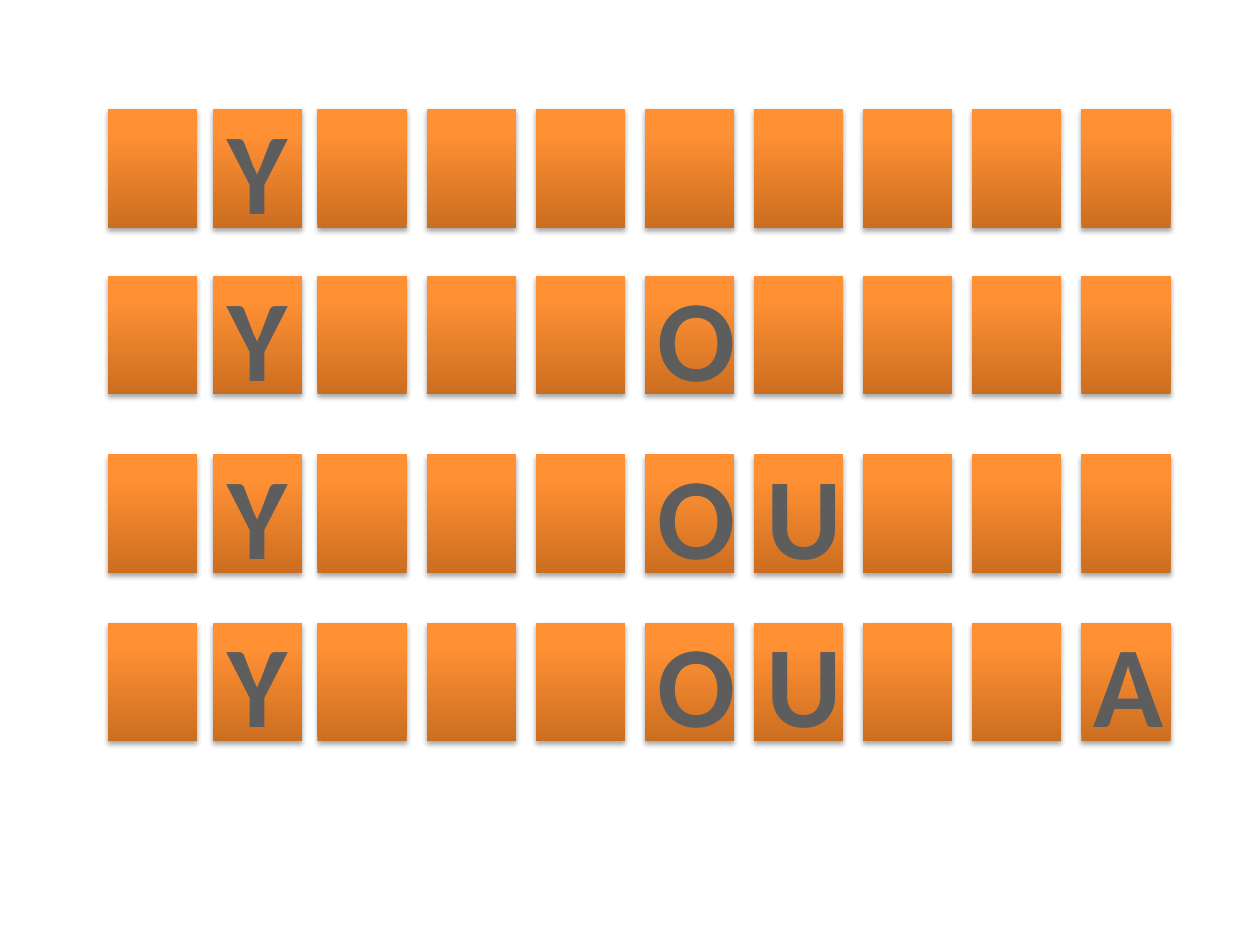
from dataclasses import dataclass

import pptx
import pptx.enum.shapes
import pptx.enum.text
import pptx.oxml
import pptx.oxml.ns
import pptx.util
from pptx.util import Cm


@dataclass(frozen=True)
class Theme:
    font: str = "Calibri"
    letter_pt: int = 66
    outline: str = "FFFFFF"
    outline_pt: float = 1.4
    tile_stops: tuple = ((0, "CC6E20"), (80, "FF9034"), (100, "FF9136"))
    letter_stops: tuple = ((0, "555555"), (49, "5D5D5D"), (50, "000000"),
                           (95, "000000"), (100, "000000"))
    shadow: str = "000000"
    shadow_alpha: int = 35
    shadow_blur_pt: float = 3.1
    shadow_distance_pt: float = 1.8


THEME = Theme()
TILE_W, TILE_H = Cm(1.8), Cm(2.39)
# The first two columns sit slightly closer together than the rest.
COLUMNS = [2.18, 4.29] + [6.4 + 2.2 * i for i in range(8)]
# Each row's top, with the letters revealed by column index.
ROWS = [
    (2.2, {1: "Y"}),
    (5.56, {1: "Y", 5: "O"}),
    (9.16, {1: "Y", 5: "O", 6: "U"}),
    (12.55, {1: "Y", 5: "O", 6: "U", 9: "A"}),
]


def drawing_xml(tag, attributes, content):
    ns = pptx.oxml.ns.nsdecls("a")
    return pptx.oxml.parse_xml(f"<a:{tag} {ns} {attributes}>{content}</a:{tag}>")


def gradient(stops, degrees):
    gs = "".join(f'<a:gs pos="{pos * 1000}"><a:srgbClr val="{color}"/></a:gs>'
                 for pos, color in stops)
    return drawing_xml("gradFill", 'rotWithShape="1"',
                       f'<a:gsLst>{gs}</a:gsLst><a:lin ang="{degrees * 60000}" scaled="0"/>')


def add_shadow(sp):
    sp.shadow.inherit = False
    effects = sp._element.spPr.find(pptx.oxml.ns.qn("a:effectLst"))
    blur = pptx.util.Pt(THEME.shadow_blur_pt)
    distance = pptx.util.Pt(THEME.shadow_distance_pt)
    effects.append(drawing_xml(
        "outerShdw", f'blurRad="{blur}" dist="{distance}" dir="5400000" rotWithShape="0"',
        f'<a:srgbClr val="{THEME.shadow}">'
        f'<a:alpha val="{THEME.shadow_alpha * 1000}"/></a:srgbClr>'))


def add_tile(s, left, top):
    sp = s.shapes.add_shape(pptx.enum.shapes.MSO_SHAPE.RECTANGLE,
                            left, top, TILE_W, TILE_H)
    sp.line.fill.background()
    line = sp._element.spPr.find(pptx.oxml.ns.qn("a:ln"))
    line.addprevious(gradient(THEME.tile_stops, 270))
    add_shadow(sp)
    return sp


def set_letter(sp, letter):
    tf = sp.text_frame
    tf.text = letter
    tf.word_wrap = True
    tf.vertical_anchor = pptx.enum.text.MSO_ANCHOR.MIDDLE
    p = tf.paragraphs[0]
    p.alignment = pptx.enum.text.PP_ALIGN.CENTER
    font = p.runs[0].font
    font.name = THEME.font
    font.size = pptx.util.Pt(THEME.letter_pt)
    font.bold = True
    props = p.runs[0]._r.get_or_add_rPr()
    props.insert(0, drawing_xml(
        "ln", f'w="{pptx.util.Pt(THEME.outline_pt)}"',
        f'<a:solidFill><a:srgbClr val="{THEME.outline}"/></a:solidFill>'))
    props.insert(1, gradient(THEME.letter_stops, 90))


def main():
    prs = pptx.Presentation()
    prs.slide_width, prs.slide_height = Cm(25.4), Cm(19.05)
    s = prs.slides.add_slide(prs.slide_layouts[6])
    for top, letters in ROWS:
        for column, left in enumerate(COLUMNS):
            tile = add_tile(s, Cm(left), Cm(top))
            if column in letters:
                set_letter(tile, letters[column])
    prs.save("out.pptx")


if __name__ == "__main__":
    main()
